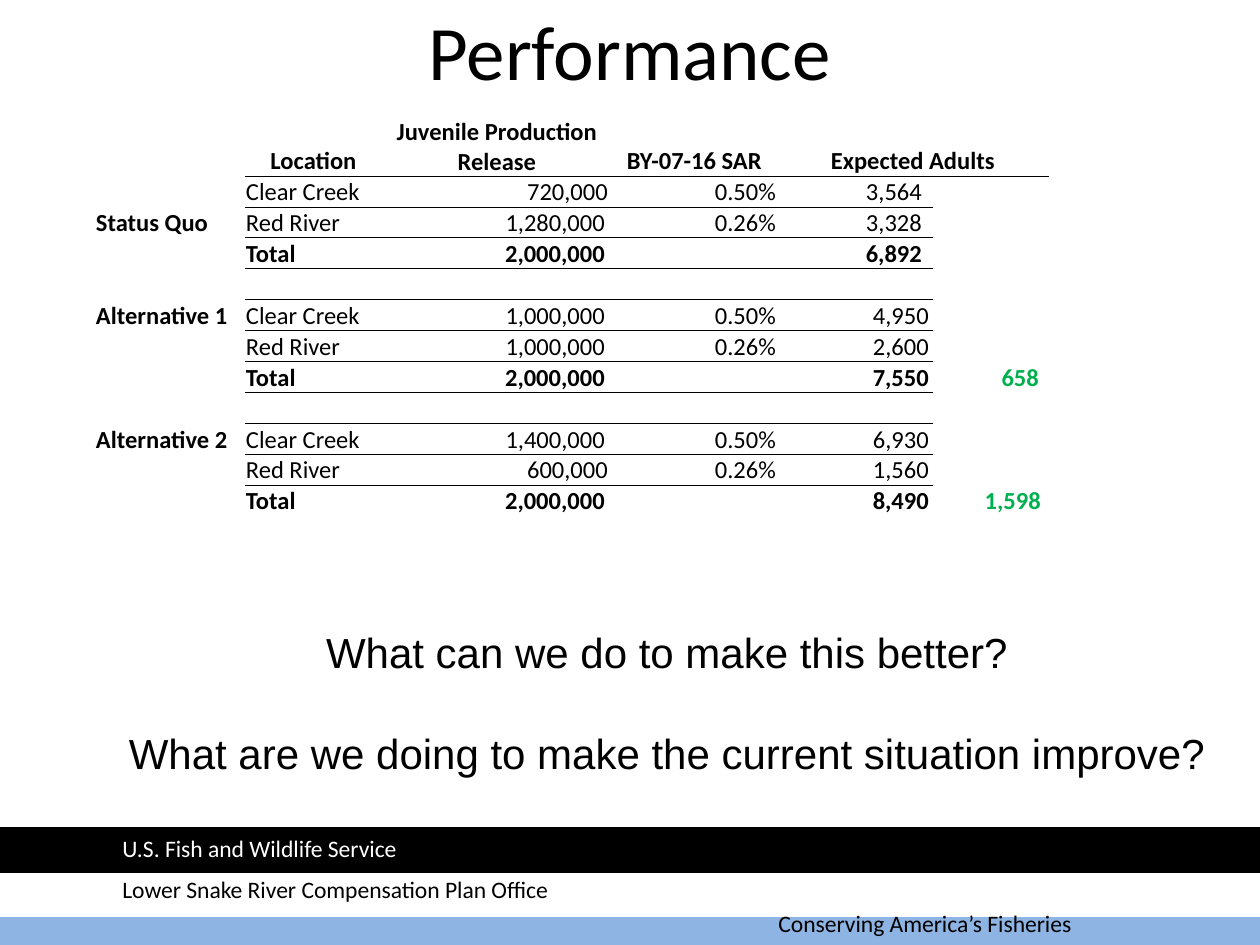
from dataclasses import dataclass

import pptx
import pptx.dml.color
import pptx.enum.shapes
import pptx.enum.text
import pptx.oxml.ns
import pptx.util
from lxml import etree

ALIGN = pptx.enum.text.PP_ALIGN
ANCHOR = pptx.enum.text.MSO_ANCHOR
qn = pptx.oxml.ns.qn


@dataclass(frozen=True)
class Theme:
    black: str = "000000"
    white: str = "FFFFFF"
    blue: str = "8EB4E3"
    green: str = "00B050"
    heading: str = "Calibri"
    body: str = "Arial"
    title_pt: float = 44
    question_pt: float = 24
    table_pt: float = 14
    footer_pt: float = 13.5


T = Theme()

TITLE = "Performance"
QUESTIONS = ["What can we do to make this better?",
             "What are we doing to make the current situation improve?"]
HEADER = ["", "Location", "Juvenile Production Release", "BY-07-16 SAR", "Expected Adults", ""]
# name, row of the name, right margin of the adults column, gain, gain margin, rows
SCENARIOS = [
    ("Status Quo", 1, 11, "", 0,
     [("Clear Creek", "720,000", "0.50%", "3,564"),
      ("Red River", "1,280,000", "0.26%", "3,328"),
      ("Total", "2,000,000", "", "6,892")]),
    ("Alternative 1", 0, 4, "658", 10,
     [("Clear Creek", "1,000,000", "0.50%", "4,950"),
      ("Red River", "1,000,000", "0.26%", "2,600"),
      ("Total", "2,000,000", "", "7,550")]),
    ("Alternative 2", 0, 4, "1,598", 8,
     [("Clear Creek", "1,400,000", "0.50%", "6,930"),
      ("Red River", "600,000", "0.26%", "1,560"),
      ("Total", "2,000,000", "", "8,490")]),
]
COLUMNS = [150, 137, 230, 165, 156, 116]
HEADER_H, ROW_H = 60, 31
BANDS = [(-1, 903, T.blue), (0, 873, T.white), (0, 829, T.black)]
BAND_H = 42
FOOTERS = [("Conserving America’s Fisheries", 766, 903, 462, T.black),
           ("U.S. Fish and Wildlife Service", 110, 828, 524, T.white),
           ("Lower Snake River Compensation Plan Office", 110, 869, 626, T.black)]


def px(n):
    return pptx.util.Emu(round(n * 914400 / 126))


def rgb(value):
    return pptx.dml.color.RGBColor.from_string(value)


def style(p, size, font=T.heading, color=T.black, bold=False, align=ALIGN.LEFT):
    p.alignment = align
    for r in p.runs:
        r.font.size = pptx.util.Pt(size)
        r.font.name = font
        r.font.bold = bold
        r.font.color.rgb = rgb(color)


def add_text(s, box, lines, size, gap=0, anchor=ANCHOR.TOP, **look):
    tf = s.shapes.add_textbox(*map(px, box)).text_frame
    tf.word_wrap = True
    tf.vertical_anchor = anchor
    tf.text = "\n".join(lines)
    for i, p in enumerate(tf.paragraphs):
        style(p, size, **look)
        if i:
            p.space_before = pptx.util.Pt(gap)


def add_band(s, left, top, color):
    sp = s.shapes.add_shape(pptx.enum.shapes.MSO_SHAPE.RECTANGLE,
                            *map(px, (left, top, 1260, BAND_H)))
    sp.shadow.inherit = False
    sp.fill.solid()
    sp.fill.fore_color.rgb = sp.line.color.rgb = rgb(color)
    sp.line.width = pptx.util.Pt(2)


def add_rule(cell, side):
    """Draw a thin line on one side (lnT or lnB) of a cell."""
    ln = etree.SubElement(cell._tc.get_or_add_tcPr(), qn("a:" + side),
                          w=str(pptx.util.Pt(0.5)))
    fill = etree.SubElement(ln, qn("a:solidFill"))
    etree.SubElement(fill, qn("a:srgbClr"), val=T.black)


def fill_cell(cell, text, margin=1, **look):
    cell.margin_left = cell.margin_top = px(1)
    cell.margin_right, cell.margin_bottom = px(margin), 0
    cell.vertical_anchor = ANCHOR.BOTTOM
    p = cell.text_frame.paragraphs[0]
    if text:
        p.text = text
        style(p, T.table_pt, **look)
    else:
        etree.SubElement(p._p, qn("a:endParaRPr"), sz=str(T.table_pt * 100))


def table_rows():
    """Yield each row as a list of (text, look) cells."""
    yield [(text, dict(bold=True, align=ALIGN.CENTER)) for text in HEADER]
    for n, (name, name_row, adult_margin, gain, gain_margin, rows) in enumerate(SCENARIOS):
        if n:
            yield [("", {})] * len(COLUMNS)
        for i, (place, release, sar, adults) in enumerate(rows):
            total = place == "Total"
            number = dict(bold=total, align=ALIGN.RIGHT)
            release_margin = 7 if len(release) > 7 else 4
            yield [(name if i == name_row else "", dict(bold=True)),
                   (place, dict(bold=total)),
                   (release, dict(number, margin=release_margin)),
                   (sar, number),
                   (adults, dict(number, margin=adult_margin)),
                   (gain if total else "", dict(number, margin=gain_margin, color=T.green))]


def add_results(s):
    rows = list(table_rows())
    heights = [HEADER_H] + [ROW_H] * (len(rows) - 1)
    table = s.shapes.add_table(len(rows), len(COLUMNS), px(95), px(116),
                               px(sum(COLUMNS)), px(sum(heights))).table
    table.first_row = table.horz_banding = False
    no_grid = "{2D5ABB26-0587-4C30-8999-92F81FD0307C}"
    table._tbl.tblPr.find(qn("a:tableStyleId")).text = no_grid
    for column, width in zip(table.columns, COLUMNS):
        column.width = px(width)
    for row, height in zip(table.rows, heights):
        row.height = px(height)
    for r, row in enumerate(rows):
        for c, (text, look) in enumerate(row):
            cell = table.cell(r, c)
            fill_cell(cell, text, **look)
            if 1 <= c <= 4 and r < len(rows) - 1 or r % 2 and 1 <= c <= 4:
                add_rule(cell, "lnT" if r % 2 else "lnB")
            cell.fill.background()
    table.cell(0, 4).merge(table.cell(0, 5))


def main():
    prs = pptx.Presentation()
    prs.slide_width, prs.slide_height = px(1260), px(945)
    s = prs.slides.add_slide(prs.slide_layouts[6])
    for band in BANDS:
        add_band(s, *band)
    for text, left, top, width, color in FOOTERS:
        add_text(s, (left, top, width, BAND_H), [text], T.footer_pt, color=color)
    add_text(s, (63, 21, 1134, 57), [TITLE], T.title_pt,
             anchor=ANCHOR.MIDDLE, align=ALIGN.CENTER)
    add_results(s)
    add_text(s, (105, 620, 1124, 165), QUESTIONS, T.question_pt, gap=29,
             font=T.body, align=ALIGN.CENTER)
    prs.save("out.pptx")


if __name__ == "__main__":
    main()
